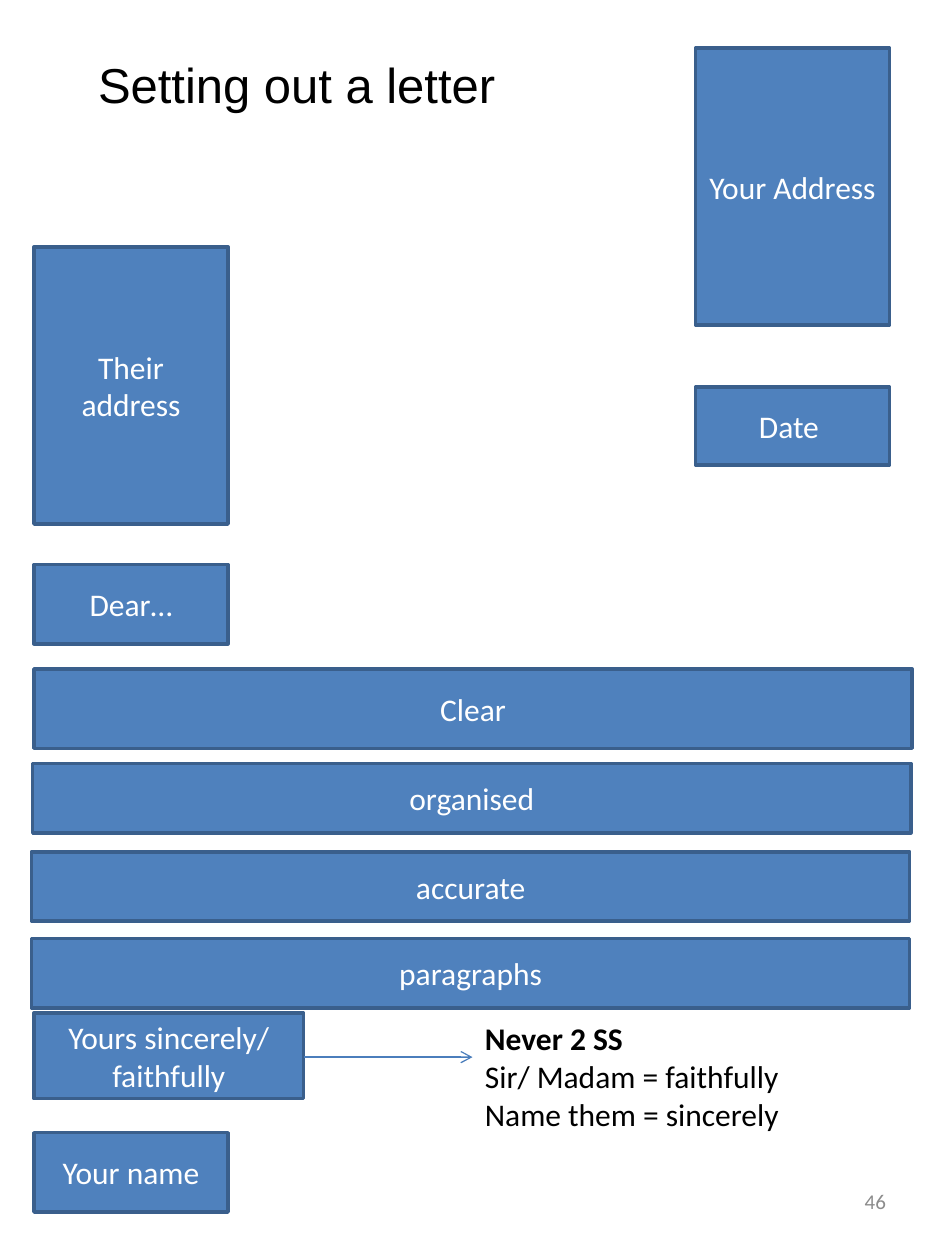
from lxml import etree
from pptx import Presentation
from pptx.dml.color import RGBColor
from pptx.enum.shapes import MSO_CONNECTOR, MSO_SHAPE
from pptx.enum.text import MSO_ANCHOR, PP_ALIGN
from pptx.oxml.ns import qn
from pptx.util import Inches, Pt

RECTANGLE = MSO_SHAPE.RECTANGLE
STRAIGHT = MSO_CONNECTOR.STRAIGHT
TOP, MIDDLE = MSO_ANCHOR.TOP, MSO_ANCHOR.MIDDLE
LEFT, CENTER, RIGHT = PP_ALIGN.LEFT, PP_ALIGN.CENTER, PP_ALIGN.RIGHT

COLORS = {
    "block": "4F81BD",
    "outline": "3A5F8C",
    "arrow": "4B7EBC",
    "light": "FFFFFF",
    "dark": "000000",
    "number": "8C8C8C",
}

MARGIN = 0.27
SENDER_LEFT = 5.52
BLOCK_WIDTH = 1.54
BODY_WIDTH = 6.97
CLOSING_TOP = 8.04

# text, left, top, width, height
LETTER_PARTS = [
    ("Your Address", SENDER_LEFT, 0.38, BLOCK_WIDTH, 2.2),
    ("Their address", MARGIN, 1.96, BLOCK_WIDTH, 2.2),
    ("Date ", SENDER_LEFT, 3.07, BLOCK_WIDTH, 0.62),
    ("Dear…", MARGIN, 4.48, BLOCK_WIDTH, 0.63),
    ("Clear", MARGIN, 5.31, BODY_WIDTH, 0.63),
    ("organised", 0.26, 6.06, BODY_WIDTH, 0.55),
    ("accurate", 0.25, 6.76, BODY_WIDTH, 0.55),
    ("paragraphs", 0.25, 7.45, BODY_WIDTH, 0.55),
    ("Yours sincerely/ faithfully", MARGIN, CLOSING_TOP, 2.14, 0.68),
    ("Your name", MARGIN, 8.99, BLOCK_WIDTH, 0.63),
]


def rgb(name):
    return RGBColor.from_string(COLORS[name])


def write_lines(frame, lines, color, size=18, font="Calibri", align=LEFT, anchor=TOP):
    """Fill a text frame with one paragraph for each (text, bold) pair."""
    frame.word_wrap = True
    frame.vertical_anchor = anchor
    for index, (text, bold) in enumerate(lines):
        para = frame.add_paragraph() if index else frame.paragraphs[0]
        para.alignment = align
        span = para.add_run()
        span.text = text
        span.font.name = font
        span.font.size = Pt(size)
        span.font.bold = bold
        span.font.color.rgb = rgb(color)


def add_block(page, text, *bounds):
    block = page.shapes.add_shape(RECTANGLE, *map(Inches, bounds))
    block.shadow.inherit = False
    block.fill.solid()
    block.fill.fore_color.rgb = rgb("block")
    block.line.color.rgb = rgb("outline")
    block.line.width = Pt(2)
    write_lines(block.text_frame, [(text, False)], "light", align=CENTER, anchor=MIDDLE)


def add_text(page, bounds, lines, color, **style):
    box = page.shapes.add_textbox(*map(Inches, bounds))
    write_lines(box.text_frame, lines, color, **style)


def add_arrow(page, *ends):
    arrow = page.shapes.add_connector(STRAIGHT, *map(Inches, ends))
    arrow.line.color.rgb = rgb("arrow")
    arrow.line.width = Pt(0.75)
    etree.SubElement(arrow.line._get_or_add_ln(), qn("a:tailEnd"), type="arrow")
    etree.SubElement(arrow._element.spPr, qn("a:effectLst"))


def main():
    deck = Presentation()
    deck.slide_width, deck.slide_height = Inches(7.5), Inches(10)
    page = deck.slides.add_slide(deck.slide_layouts[6])

    for part in LETTER_PARTS:
        add_block(page, *part)

    add_arrow(page, 2.41, 8.39, 3.75, 8.39)
    closing_rules = [
        ("Never 2 SS", True),
        ("Sir/ Madam = faithfully", False),
        ("Name them = sincerely", False),
    ]
    add_text(page, (3.75, CLOSING_TOP, 3.31, 1.01), closing_rules, "dark")
    add_text(page, (5.38, 9.27, 1.75, 0.53), [("46", False)], "number",
             size=12, align=RIGHT, anchor=MIDDLE)
    add_text(page, (0.68, 0.38, 3.86, 0.57), [("Setting out a letter", False)], "dark",
             size=28, font="Arial")

    deck.save("out.pptx")


if __name__ == "__main__":
    main()
